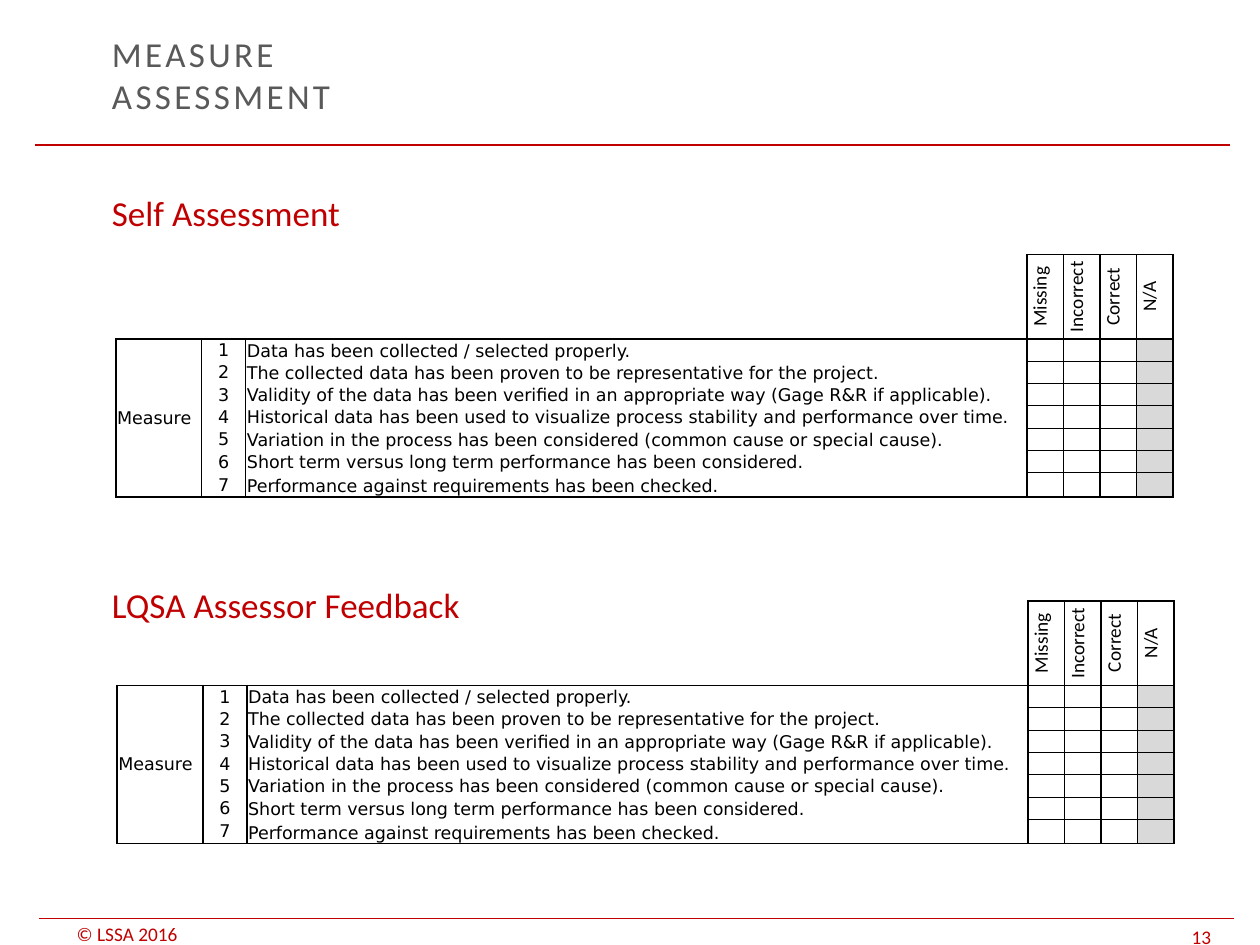
from lxml import etree
from pptx import Presentation
from pptx.dml import color
from pptx.enum import shapes, text
from pptx.oxml import ns
from pptx.util import Inches, Pt

RED = "C00000"
GREY = "595959"
BLACK = "000000"
SHADE = "D9D9D9"
HEADS = ["Missing", "Incorrect", "Correct", "N/A"]
CHECKS = [
    "Data has been collected / selected properly.",
    "The collected data has been proven to be representative for the project.",
    "Validity of the data has been verified in an appropriate way (Gage R&R if applicable).",
    "Historical data has been used to visualize process stability and performance over time.",
    "Variation in the process has been considered (common cause or special cause).",
    "Short term versus long term performance has been considered.",
    "Performance against requirements has been checked.",
]
WIDTHS = [0.68, 0.35, 6.2] + [0.29] * len(HEADS)
HEIGHTS = [0.67] + [1.06 / 6] * 6 + [0.19]
FIRST = 3
LAST = len(CHECKS)
MID = text.MSO_ANCHOR.MIDDLE
LOW = text.MSO_ANCHOR.BOTTOM


def paint(value):
    return color.RGBColor.from_string(value)


def write(frame, words, size=20, font="Calibri", tint=RED, center=False, gap=None):
    para = frame.paragraphs[0]
    para.text = words
    para.alignment = text.PP_ALIGN.CENTER if center else text.PP_ALIGN.LEFT
    for run in para.runs:
        run.font.size = Pt(size)
        run.font.name = font
        run.font.color.rgb = paint(tint)
        if gap:
            run._r.get_or_add_rPr().set("spc", str(gap))
    if not para.runs:
        etree.SubElement(para._p, ns.qn("a:endParaRPr"), sz=str(size * 100))


def label(slide, words, left, top, wide, high, anchor=text.MSO_ANCHOR.TOP, pad=0.05, **style):
    box = slide.shapes.add_textbox(Inches(left), Inches(top), Inches(wide), Inches(high))
    frame = box.text_frame
    frame.word_wrap = True
    frame.vertical_anchor = anchor
    frame.margin_top = frame.margin_bottom = Inches(pad)
    write(frame, words, **style)


def rule(slide, left, right, top):
    line = slide.shapes.add_connector(
        shapes.MSO_CONNECTOR.STRAIGHT, Inches(left), Inches(top), Inches(right), Inches(top))
    line.line.color.rgb = paint(RED)
    line.line.width = Pt(0.75)
    etree.SubElement(line._element.spPr, ns.qn("a:effectLst"))


def border(cell, side, width):
    line = etree.SubElement(cell._tc.get_or_add_tcPr(), ns.qn("a:ln" + side))
    if not width:
        etree.SubElement(line, ns.qn("a:noFill"))
        return
    line.set("w", str(Pt(width)))
    fill = etree.SubElement(line, ns.qn("a:solidFill"))
    etree.SubElement(fill, ns.qn("a:srgbClr"), val=BLACK)


def upright(row, col):
    if row == 0 and col < FIRST:
        return 0
    if col == 4 or (col == 6 and row > 0):
        return 0.5
    return 1


def level(row, col):
    if row in (1, LAST + 1):
        return 1
    if col < FIRST:
        return 0
    return 1 if row == 0 else 0.5


def content(row, col):
    if row == 0:
        return HEADS[col - FIRST] if col >= FIRST else ""
    if col == 0:
        return "Measure" if row == 1 else ""
    if col == 1:
        return str(row)
    return CHECKS[row - 1] if col == 2 else ""


def dress(cell, row, col):
    cell.margin_left = cell.margin_right = cell.margin_top = Inches(0.01)
    cell.margin_bottom = 0
    cell.vertical_anchor = MID if row and col < 2 else LOW
    words = content(row, col)
    if row == 0:
        write(cell.text_frame, words, size=11, tint=BLACK, center=True)
        if words:
            cell._tc.get_or_add_tcPr().set("vert", "vert270")
    else:
        write(cell.text_frame, words, size=10, font="DejaVu Sans", tint=BLACK, center=col == 1)
    end = LAST + 1 if row and col == 0 else row + 1
    border(cell, "L", upright(row, col))
    border(cell, "R", upright(row, col + 1))
    border(cell, "T", level(row, col))
    border(cell, "B", level(end, col))
    if row and col == len(WIDTHS) - 1:
        cell.fill.solid()
        cell.fill.fore_color.rgb = paint(SHADE)
    else:
        cell.fill.background()


def grid(slide, left, top):
    table = slide.shapes.add_table(
        len(HEIGHTS), len(WIDTHS), Inches(left), Inches(top),
        Inches(sum(WIDTHS)), Inches(sum(HEIGHTS))).table
    table.first_row = table.horz_banding = False
    style = table._tbl.tblPr.find(ns.qn("a:tableStyleId"))
    style.text = "{2D5ABB26-0587-4C30-8999-92F81FD0307C}"
    for col, wide in enumerate(WIDTHS):
        table.columns[col].width = Inches(wide)
    for row, high in enumerate(HEIGHTS):
        table.rows[row].height = Inches(high)
        for col in range(len(WIDTHS)):
            dress(table.cell(row, col), row, col)
    table.cell(1, 0).merge(table.cell(LAST, 0))


def main():
    deck = Presentation()
    deck.slide_width, deck.slide_height = Inches(10), Inches(7.5)
    slide = deck.slides.add_slide(deck.slide_layouts[6])
    label(slide, "© LSSA 2016", 0.51, 7.32, 1.42, 0.18, anchor=LOW, pad=0, size=11)
    label(slide, "13", 9.36, 7.31, 0.64, 0.22, anchor=LOW, pad=0, size=11)
    rule(slide, 0.28, 9.76, 1.15)
    rule(slide, 0.31, 9.79, 7.29)
    label(slide, "MEASURE\vASSESSMENT", 0.79, 0.26, 7.09, 0.66, anchor=MID, tint=GREY, gap=190)
    label(slide, "Self Assessment", 0.79, 1.47, 7, 0.44)
    label(slide, "LQSA Assessor Feedback", 0.79, 4.58, 7, 0.44)
    grid(slide, 0.92, 2.02)
    grid(slide, 0.93, 4.77)
    deck.save("out.pptx")


if __name__ == "__main__":
    main()
